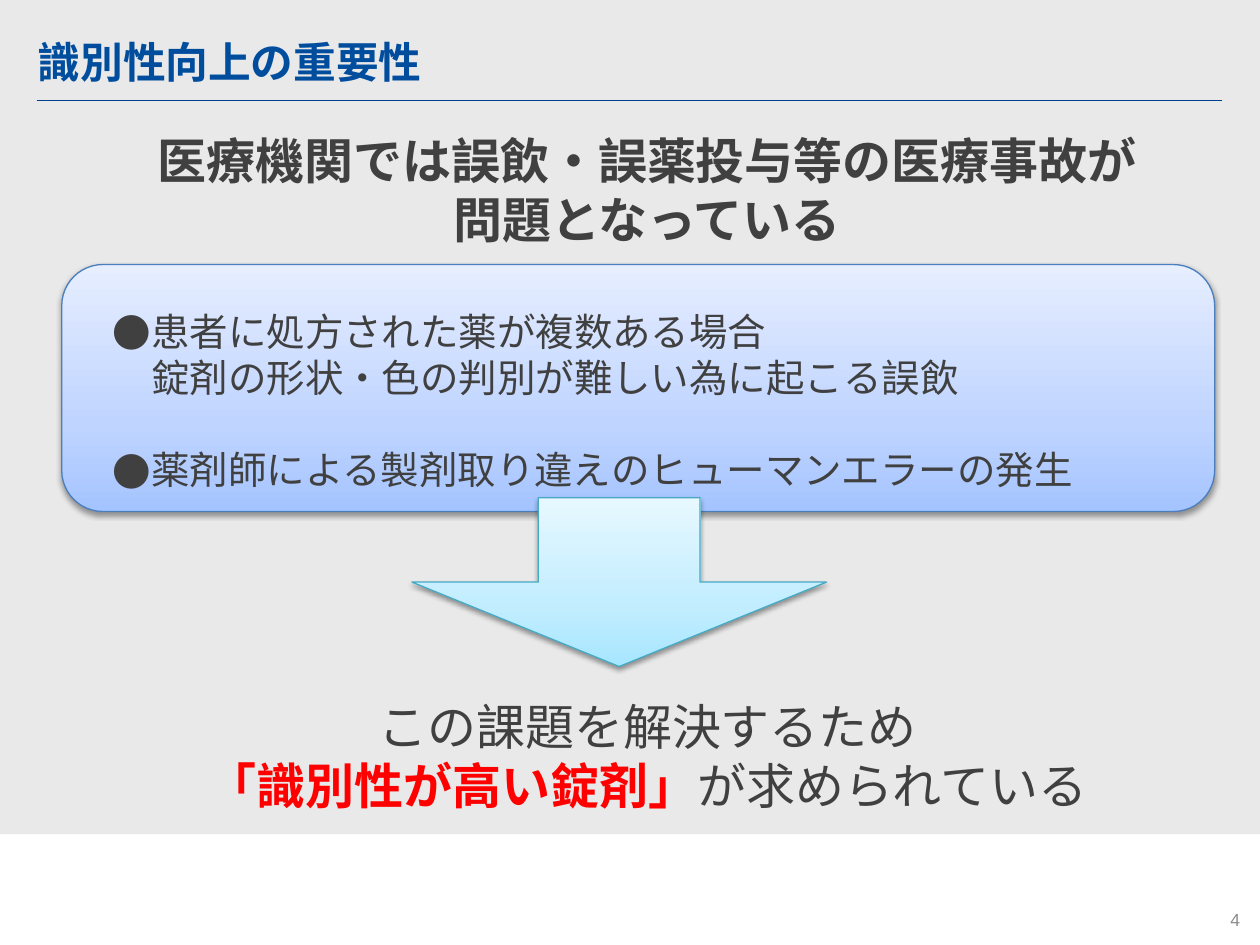
from copy import deepcopy
from lxml.etree import SubElement
from pptx import Presentation
from pptx.dml.color import RGBColor
from pptx.enum.shapes import MSO_CONNECTOR as Connector, MSO_SHAPE as Shape
from pptx.enum.text import MSO_ANCHOR as Anchor, MSO_AUTO_SIZE as AutoSize, PP_ALIGN as Align
from pptx.oxml.ns import qn
from pptx.util import Pt

WHITE = RGBColor(0xFF, 0xFF, 0xFF)
GRAY = RGBColor(0xD9, 0xD9, 0xD9)
NAVY = RGBColor(0x00, 0x40, 0x8B)
TITLE_BLUE = RGBColor(0x00, 0x4D, 0x9E)
TEXT_GRAY = RGBColor(0x40, 0x40, 0x40)
NUMBER_GRAY = RGBColor(0x8C, 0x8C, 0x8C)
RED = RGBColor(0xFF, 0x00, 0x00)
BLACK = RGBColor(0x00, 0x00, 0x00)
PANEL_LINE = RGBColor(0x4B, 0x7E, 0xBC)
PANEL_COLORS = [RGBColor(0xA4, 0xC4, 0xFF), RGBColor(0xBF, 0xD4, 0xFF), RGBColor(0xE6, 0xEE, 0xFF)]
ARROW_LINE = RGBColor(0x46, 0xAA, 0xC5)
ARROW_COLORS = [RGBColor(0xA7, 0xE6, 0xFF), RGBColor(0xC1, 0xED, 0xFF), RGBColor(0xE7, 0xF8, 0xFF)]
GRADIENT_POSITIONS = [0, 0.35, 1]
JAPANESE_FONT = "Noto Sans CJK JP"
LINE_HEIGHTS = {28: 33.5, 22: 26.5}
BULLET_INDENT = 22


def place(shape, left, top, width, height):
    shape.left, shape.top = Pt(left), Pt(top)
    shape.width, shape.height = Pt(width), Pt(height)


def prepare_frame(shape, anchor=Anchor.TOP):
    frame = shape.text_frame
    frame.word_wrap = True
    frame.auto_size = AutoSize.NONE
    frame.vertical_anchor = anchor
    return frame


def add_run(paragraph, text, size, color=TEXT_GRAY, bold=False, font_name=JAPANESE_FONT):
    run = paragraph.add_run()
    run.text = text
    font = run.font
    font.size, font.bold, font.name = Pt(size), bold, font_name
    font.color.rgb = color
    SubElement(run._r.get_or_add_rPr(), qn("a:ea"), typeface=font_name)


def format_paragraph(paragraph, size, align=Align.CENTER, space_before=0):
    paragraph.alignment = align
    paragraph.line_spacing = Pt(LINE_HEIGHTS[size])
    paragraph.space_before = Pt(space_before)
    paragraph.space_after = Pt(0)


def remove_bullet(paragraph):
    properties = paragraph._p.get_or_add_pPr()
    properties.set("marL", "0")
    properties.set("indent", "0")
    SubElement(properties, qn("a:buNone"))


def add_bullet(paragraph, character):
    properties = paragraph._p.get_or_add_pPr()
    properties.set("marL", str(Pt(2 * BULLET_INDENT)))
    properties.set("indent", str(-Pt(BULLET_INDENT)))
    color = SubElement(properties, qn("a:buClr"))
    SubElement(color, qn("a:srgbClr"), val=str(TEXT_GRAY))
    SubElement(properties, qn("a:buFont"), typeface=JAPANESE_FONT)
    SubElement(properties, qn("a:buChar"), char=character)


def add_background(slide):
    background = slide.shapes.add_shape(Shape.RECTANGLE, 0, 0, Pt(720), Pt(476.64))
    background.shadow.inherit = False
    background.fill.solid()
    background.fill.fore_color.rgb = GRAY
    color = background._element.spPr.find(".//" + qn("a:srgbClr"))
    SubElement(color, qn("a:alpha"), val="57000")
    background.line.fill.background()


def add_rule(slide):
    rule = slide.shapes.add_connector(Connector.STRAIGHT, Pt(20.9), Pt(57.5), Pt(698.4), Pt(57.5))
    rule.line.color.rgb = NAVY
    rule.line.width = Pt(0.75)
    SubElement(rule._element.spPr, qn("a:effectLst"))


def add_gradient_shape(slide, kind, box, colors, line_color):
    shape = slide.shapes.add_shape(kind, *map(Pt, box))
    shape.fill.gradient()
    shape.fill.gradient_angle = 90
    stop_list = shape._element.spPr.find(".//" + qn("a:gsLst"))
    stop_list.append(deepcopy(stop_list[0]))
    for stop, position, color in zip(shape.fill.gradient_stops, GRADIENT_POSITIONS, colors):
        stop.position = position
        stop.color.rgb = color
    shape.line.color.rgb = line_color
    shape.line.width = Pt(0.75)
    add_shadow(shape)
    return shape


def add_shadow(shape):
    shape.shadow.inherit = False
    effects = shape._element.spPr.find(qn("a:effectLst"))
    shadow = SubElement(effects, qn("a:outerShdw"), blurRad=str(Pt(3.1)), dist=str(Pt(1.6)),
                        dir="5400000", rotWithShape="0")
    color = SubElement(shadow, qn("a:srgbClr"), val=str(BLACK))
    SubElement(color, qn("a:alpha"), val="38000")


def fill_title(title):
    place(title, 14.4, 17.3, 660, 36)
    paragraph = prepare_frame(title, Anchor.MIDDLE).paragraphs[0]
    paragraph.alignment = Align.LEFT
    add_run(paragraph, "識別性向上の重要性", 24.4, TITLE_BLUE, True)


def fill_body(body):
    place(body, 35.3, 71.3, 668.9, 220.3)
    frame = prepare_frame(body)
    for index, text in enumerate(["医療機関では誤飲・誤薬投与等の医療事故が", "問題となっている"]):
        paragraph = frame.add_paragraph() if index else frame.paragraphs[0]
        format_paragraph(paragraph, 28)
        remove_bullet(paragraph)
        add_run(paragraph, text, 28, bold=True)
    causes = [
        (["患者に処方された薬が複数ある場合", "錠剤の形状・色の判別が難しい為に起こる誤飲"], 34),
        (["薬剤師による製剤取り違えのヒューマンエラーの発生"], 26),
    ]
    for lines, space_before in causes:
        paragraph = frame.add_paragraph()
        format_paragraph(paragraph, 22, Align.LEFT, space_before)
        add_bullet(paragraph, "●")
        for index, line in enumerate(lines):
            if index:
                paragraph.add_line_break()
            add_run(paragraph, line, 22)


def add_conclusion(slide):
    box = slide.shapes.add_textbox(Pt(97.9), Pt(394.6), Pt(544.3), Pt(74.9))
    frame = prepare_frame(box)
    first, second = frame.paragraphs[0], frame.add_paragraph()
    for paragraph in (first, second):
        format_paragraph(paragraph, 28)
    add_run(first, "この課題を解決するため", 28)
    add_run(second, "「識別性が高い錠剤」", 28, RED, True)
    add_run(second, "が求められている", 28)


def add_page_number(slide):
    box = slide.shapes.add_textbox(Pt(547.9), Pt(511.2), Pt(167.8), Pt(28.8))
    paragraph = prepare_frame(box, Anchor.MIDDLE).paragraphs[0]
    paragraph.alignment = Align.RIGHT
    add_run(paragraph, "4", 10, NUMBER_GRAY, font_name="Arial")


def bring_to_front(shape):
    shape._element.getparent().append(shape._element)


def main():
    presentation = Presentation()
    presentation.slide_width, presentation.slide_height = Pt(720), Pt(540)
    slide = presentation.slides.add_slide(presentation.slide_layouts[1])
    slide.background.fill.solid()
    slide.background.fill.fore_color.rgb = WHITE
    title, body = slide.placeholders
    add_background(slide)
    add_rule(slide)
    add_gradient_shape(slide, Shape.ROUNDED_RECTANGLE, (35.3, 151.2, 658.8, 141.1), PANEL_COLORS, PANEL_LINE)
    add_page_number(slide)
    fill_body(body)
    bring_to_front(body)
    add_conclusion(slide)
    fill_title(title)
    bring_to_front(title)
    arrow = add_gradient_shape(slide, Shape.DOWN_ARROW, (235.4, 284.4, 236.9, 96.5), ARROW_COLORS, ARROW_LINE)
    arrow.adjustments[0], arrow.adjustments[1] = 0.39, 0.5
    presentation.save("out.pptx")


if __name__ == "__main__":
    main()
